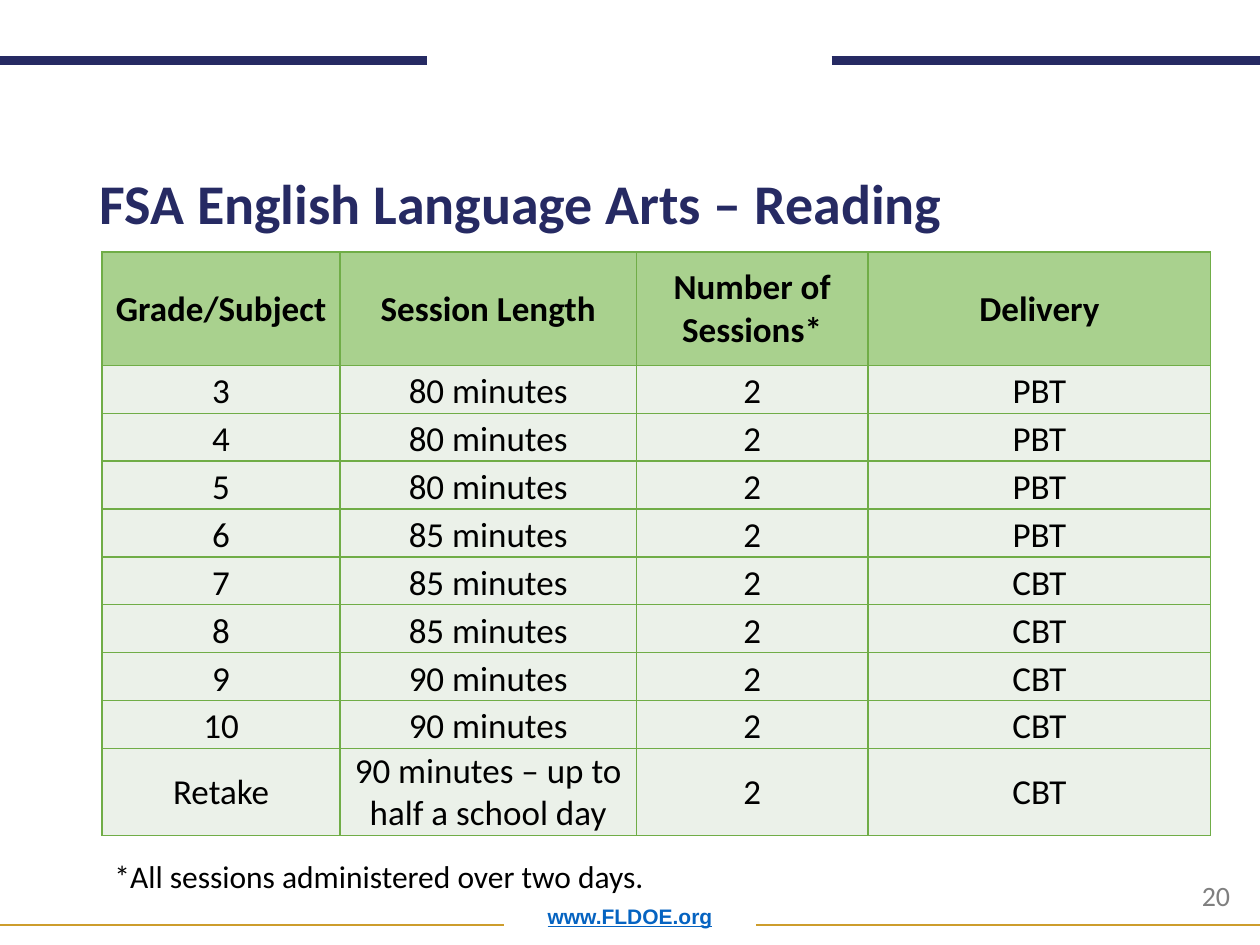
import pptx
import pptx.util
import pptx.dml.color
import pptx.enum.shapes
import pptx.enum.text
import pptx.oxml.ns
from lxml import etree

Inches = pptx.util.Inches
Pt = pptx.util.Pt
RGBColor = pptx.dml.color.RGBColor
ALIGN = pptx.enum.text.PP_ALIGN
ANCHOR = pptx.enum.text.MSO_ANCHOR
qn = pptx.oxml.ns.qn

NAVY = RGBColor(0x26, 0x2A, 0x63)
GOLD = RGBColor(0xCD, 0x9D, 0x2C)
LINK_BLUE = RGBColor(0x05, 0x63, 0xC1)
GRAY = RGBColor(0x7F, 0x7F, 0x7F)
BLACK = RGBColor(0, 0, 0)
HEADER_GREEN = RGBColor(0xA9, 0xD1, 0x8E)
BODY_GREEN = RGBColor(0xEB, 0xF1, 0xE9)
BORDER_GREEN = RGBColor(0x70, 0xAD, 0x47)


def write(tf, text, size=20, color=BLACK, font="Calibri", bold=False,
          underline=None, align=ALIGN.LEFT, anchor=ANCHOR.TOP, spacing=None):
    tf.vertical_anchor = anchor
    p = tf.paragraphs[0]
    p.alignment = align
    p.line_spacing = spacing
    r = p.add_run()
    r.text = text
    r.font.name = font
    r.font.size = Pt(size)
    r.font.bold = bold
    r.font.underline = underline
    r.font.color.rgb = color


def add_borders(cell, color, width):
    tc_pr = cell._tc.get_or_add_tcPr()
    for i, side in enumerate(("a:lnL", "a:lnR", "a:lnT", "a:lnB")):
        ln = etree.Element(qn(side), w=str(Pt(width)))
        fill = etree.SubElement(ln, qn("a:solidFill"))
        etree.SubElement(fill, qn("a:srgbClr"), val=str(color))
        tc_pr.insert(i, ln)


prs = pptx.Presentation()
prs.slide_width = Inches(10)
prs.slide_height = Inches(7.5)
slide = prs.slides.add_slide(prs.slide_layouts[5])

# Rules at the top and bottom of the page
for x1, x2, y, color, width in (
    (0, 3.39, 0.48, NAVY, 5),
    (6.6, 10, 0.48, NAVY, 5),
    (0, 4, 7.34, GOLD, 1),
    (6, 10, 7.34, GOLD, 1),
):
    rule = slide.shapes.add_connector(
        pptx.enum.shapes.MSO_CONNECTOR.STRAIGHT,
        Inches(x1), Inches(y), Inches(x2), Inches(y))
    rule.line.color.rgb = color
    rule.line.width = Pt(width)
    etree.SubElement(rule._element.spPr, qn("a:effectLst"))

# Title
title = slide.shapes.title
title.left, title.top = Inches(0.69), Inches(1.06)
title.width, title.height = Inches(8.62), Inches(0.87)
title.text_frame.word_wrap = True
write(title.text_frame, "FSA English Language Arts – Reading", size=32,
      color=NAVY, bold=True, anchor=ANCHOR.BOTTOM, spacing=0.9)

# Session table
sessions = [("Grade/Subject", "Session Length", "Number of Sessions*", "Delivery")]
for grade in range(3, 11):
    minutes = 80 if grade <= 5 else 85 if grade <= 8 else 90
    delivery = "PBT" if grade <= 6 else "CBT"
    sessions.append((str(grade), f"{minutes} minutes", "2", delivery))
sessions.append(("Retake", "90 minutes – up to half a school day", "2", "CBT"))

frame = slide.shapes.add_table(len(sessions), 4, Inches(0.81), Inches(2),
                               Inches(8.8), Inches(4.61))
table = frame.table
table.horz_banding = False
table.first_row = False
for column, width in zip(table.columns, (1.89, 2.35, 1.84, 2.72)):
    column.width = Inches(width)
last = len(sessions) - 1
for i, values in enumerate(sessions):
    table.rows[i].height = Inches(0.9 if i == 0 else 0.38)
    for j, value in enumerate(values):
        cell = table.cell(i, j)
        cell.margin_left = cell.margin_right = cell.margin_top = Inches(0.01)
        cell.margin_bottom = 0
        cell.vertical_anchor = ANCHOR.MIDDLE if i in (0, last) else ANCHOR.BOTTOM
        cell.fill.solid()
        cell.fill.fore_color.rgb = HEADER_GREEN if i == 0 else BODY_GREEN
        add_borders(cell, BORDER_GREEN, 1)
        write(cell.text_frame, value, bold=i == 0, align=ALIGN.CENTER, anchor=None)
frame.height = Inches(4.61)

# Footnote, web address and page number
for text, left, top, width, height, wrap, style in (
    ("*All sessions administered over two days.", 0.81, 6.75, 4.51, 0.4, False,
     dict(size=18)),
    ("www.FLDOE.org", 0.69, 7, 8.62, 0.42, True,
     dict(size=12, font="Arial", color=LINK_BLUE, bold=True, underline=True,
          align=ALIGN.CENTER, anchor=ANCHOR.BOTTOM, spacing=0.9)),
    ("20", 9.44, 6.92, 0.52, 0.37, True, dict(size=16, color=GRAY)),
):
    box = slide.shapes.add_textbox(Inches(left), Inches(top), Inches(width), Inches(height))
    box.text_frame.word_wrap = wrap
    write(box.text_frame, text, **style)

prs.save("out.pptx")
